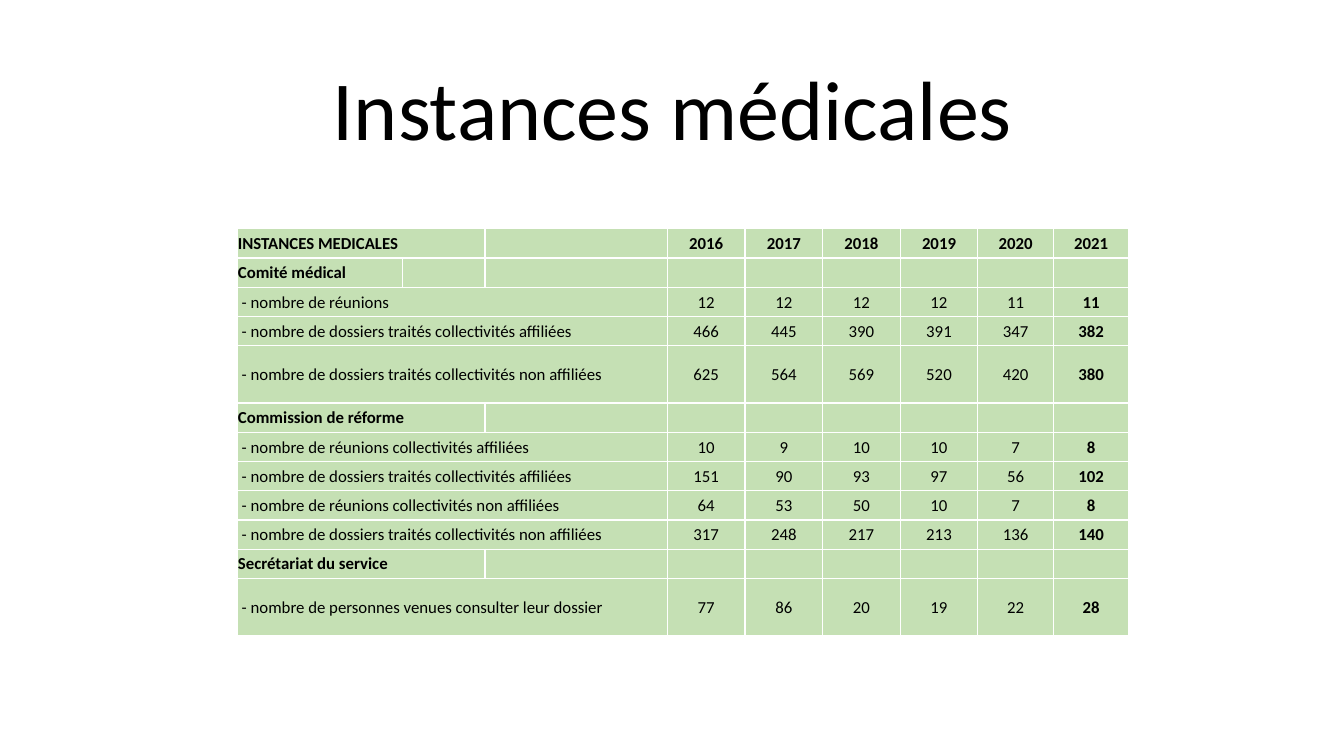
from lxml.etree import SubElement
from pptx import Presentation
from pptx.dml.color import RGBColor
from pptx.enum.text import MSO_ANCHOR, PP_ALIGN
from pptx.oxml.ns import qn
from pptx.util import Inches, Pt

COLORS = {"background": "FFFFFF", "text": "000000", "cell": "C5E0B4", "border": "FFFFFF"}
FONT = "Calibri"
SLIDE_WIDTH, SLIDE_HEIGHT = Inches(13.33), Inches(7.5)
LABEL_WIDTHS = [1.64, 0.82, 1.81]
YEAR_WIDTHS = [0.77] * 4 + [0.75] * 2
ROW_HEIGHT = 0.29
TALL_ROW_HEIGHT = 0.57
TALL_ROWS = {4, 11}
TABLE_SIZE = 12

ROWS = [
    ("INSTANCES MEDICALES", 2, [2016, 2017, 2018, 2019, 2020, 2021]),
    ("Comité médical", 1, []),
    (" - nombre de réunions", 3, [12, 12, 12, 12, 11, 11]),
    (" - nombre de dossiers traités collectivités affiliées", 3, [466, 445, 390, 391, 347, 382]),
    (" - nombre de dossiers traités collectivités non affiliées", 3, [625, 564, 569, 520, 420, 380]),
    ("Commission de réforme", 2, []),
    (" - nombre de réunions collectivités affiliées", 3, [10, 9, 10, 10, 7, 8]),
    (" - nombre de dossiers traités collectivités affiliées", 3, [151, 90, 93, 97, 56, 102]),
    (" - nombre de réunions collectivités non affiliées", 3, [64, 53, 50, 10, 7, 8]),
    (" - nombre de dossiers traités collectivités non affiliées", 3, [317, 248, 217, 213, 136, 140]),
    ("Secrétariat du service", 2, []),
    (" - nombre de personnes venues consulter leur dossier", 3, [77, 86, 20, 19, 22, 28]),
]


def color(name):
    return RGBColor.from_string(COLORS[name])


def add_run(paragraph, text, size, bold=False):
    run = paragraph.add_run()
    run.text = text
    run.font.name = FONT
    run.font.size = Pt(size)
    run.font.bold = bold
    run.font.color.rgb = color("text")


def set_title(slide, text):
    title = slide.shapes.title
    title.left, title.top = int(SLIDE_WIDTH * 0.069), Inches(0.4)
    title.width, title.height = Inches(11.5), Inches(1.45)
    title.text_frame.vertical_anchor = MSO_ANCHOR.MIDDLE
    paragraph = title.text_frame.paragraphs[0]
    paragraph.alignment = PP_ALIGN.CENTER
    paragraph.line_spacing = 0.9
    add_run(paragraph, text, 60)


def add_borders(cell):
    properties = cell._tc.get_or_add_tcPr()
    for side in ("a:lnL", "a:lnR", "a:lnT", "a:lnB"):
        line = SubElement(properties, qn(side), w=str(Pt(1)))
        fill = SubElement(line, qn("a:solidFill"))
        SubElement(fill, qn("a:srgbClr"), val=COLORS["border"])


def format_cell(cell):
    add_borders(cell)
    cell.fill.solid()
    cell.fill.fore_color.rgb = color("cell")
    cell.margin_left = cell.margin_right = cell.margin_top = Inches(0.01)
    cell.margin_bottom = 0
    cell.vertical_anchor = MSO_ANCHOR.MIDDLE
    SubElement(cell.text_frame.paragraphs[0]._p, qn("a:endParaRPr"), sz=str(TABLE_SIZE * 100))


def fill_row(table, row_index, label, span, values):
    is_detail = span == len(LABEL_WIDTHS)
    label_cell = table.cell(row_index, 0)
    if span > 1:
        label_cell.merge(table.cell(row_index, span - 1))
    add_run(label_cell.text_frame.paragraphs[0], label, TABLE_SIZE, not is_detail)
    for index, value in enumerate(values):
        cell = table.cell(row_index, len(LABEL_WIDTHS) + index)
        paragraph = cell.text_frame.paragraphs[0]
        paragraph.alignment = PP_ALIGN.CENTER
        is_last = index == len(values) - 1
        add_run(paragraph, str(value), TABLE_SIZE, is_last or not is_detail)


def add_statistics_table(slide):
    widths = LABEL_WIDTHS + YEAR_WIDTHS
    heights = [TALL_ROW_HEIGHT if index in TALL_ROWS else ROW_HEIGHT for index in range(len(ROWS))]
    frame = slide.shapes.add_table(
        len(ROWS), len(widths), Inches(2.35), Inches(2.27), Inches(sum(widths)), Inches(sum(heights))
    )
    table = frame.table
    table.first_row = False
    table.horz_banding = False
    for column, width in zip(table.columns, widths):
        column.width = Inches(width)
    for row, height in zip(table.rows, heights):
        row.height = Inches(height)
    for cell in table.iter_cells():
        format_cell(cell)
    for row_index, (label, span, values) in enumerate(ROWS):
        fill_row(table, row_index, label, span, values)


def main():
    presentation = Presentation()
    presentation.slide_width, presentation.slide_height = SLIDE_WIDTH, SLIDE_HEIGHT
    slide = presentation.slides.add_slide(presentation.slide_layouts[5])
    slide.background.fill.solid()
    slide.background.fill.fore_color.rgb = color("background")
    set_title(slide, "Instances médicales")
    add_statistics_table(slide)
    presentation.save("out.pptx")


if __name__ == "__main__":
    main()
